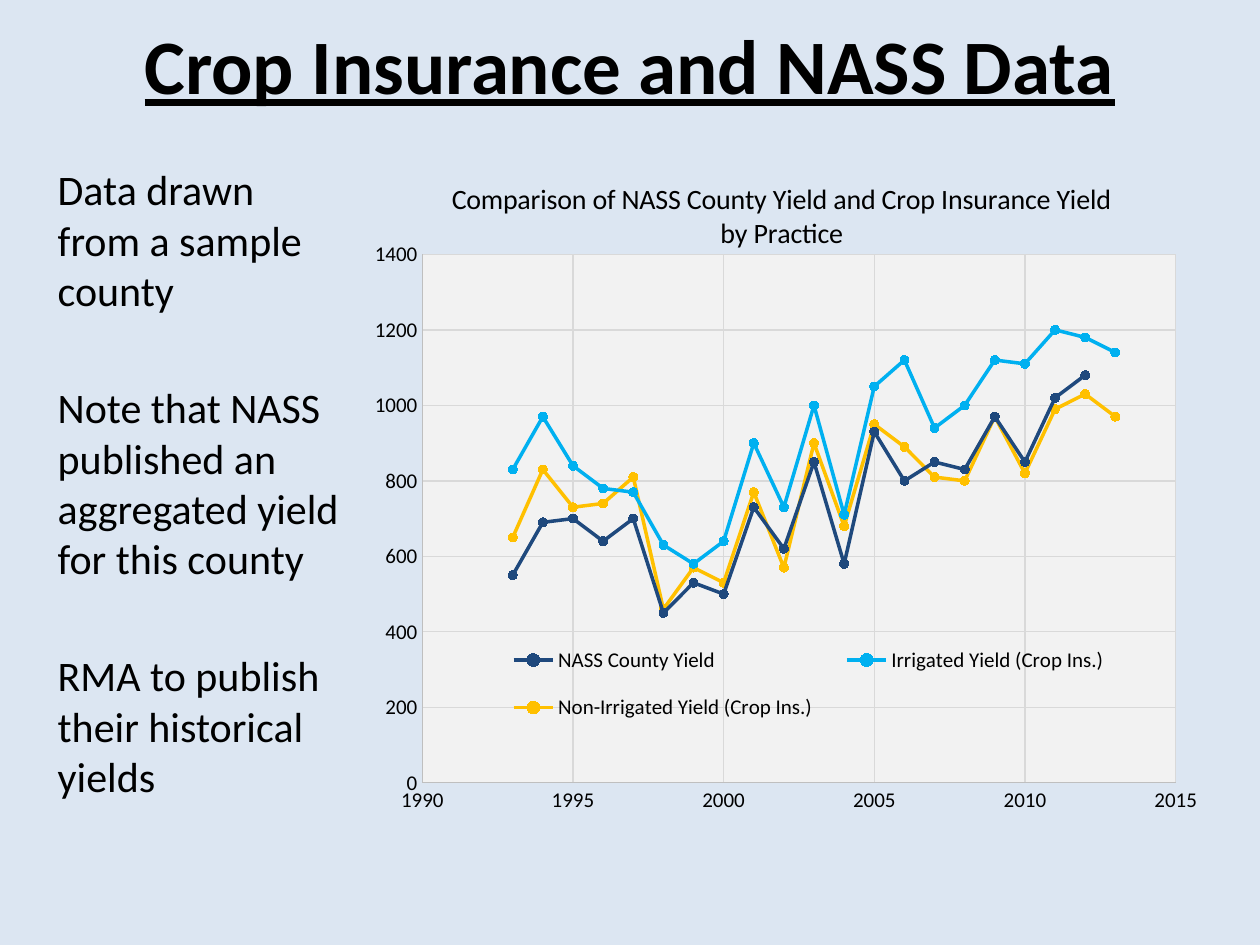
from itertools import zip_longest

from pptx import Presentation
from pptx.chart.data import XyChartData
from pptx.dml.color import RGBColor
from pptx.enum.chart import XL_CHART_TYPE as ChartType, XL_LEGEND_POSITION as LegendPosition
from pptx.enum.chart import XL_MARKER_STYLE as MarkerStyle, XL_TICK_MARK as TickMark
from pptx.enum.text import MSO_ANCHOR as Anchor, PP_ALIGN as Align
from pptx.oxml import parse_xml
from pptx.oxml.ns import nsdecls, qn
from pptx.util import Inches, Pt

WIDTH, HEIGHT = 10, 7.5
COLORS = {
    "page": "DCE6F2", "text": "000000", "plot": "F2F2F2", "axis": "BFBFBF", "grid": "D9D9D9",
    "nass": "1F497D", "irrigated": "00B0F0", "dry": "FFC000",
}
# Left, top, width and height as shares of the slide
REGIONS = {
    "title": (0.05, 0, 0.9, 0.123),
    "notes": (0.036, 0.167, 0.247, 0.733),
    "chart": (0.275, 0.163, 0.692, 0.733),
}
NOTES = [
    "Data drawn from a sample county",
    "Note that NASS published an aggregated yield for this county",
    "RMA to publish their historical yields",
]
CHART_TITLE = "Comparison of NASS County Yield and Crop Insurance Yield by Practice"
YEARS = range(1993, 2014)
YIELDS = [
    ("NASS County Yield", "nass",
     [550, 690, 700, 640, 700, 450, 530, 500, 730, 620, 850,
      580, 930, 800, 850, 830, 970, 850, 1020, 1080]),
    ("Irrigated Yield (Crop Ins.)", "irrigated",
     [830, 970, 840, 780, 770, 630, 580, 640, 900, 730, 1000,
      710, 1050, 1120, 940, 1000, 1120, 1110, 1200, 1180, 1140]),
    ("Non-Irrigated Yield (Crop Ins.)", "dry",
     [650, 830, 730, 740, 810, 460, 570, 530, 770, 570, 900,
      680, 950, 890, 810, 800, 970, 820, 990, 1030, 970]),
]


def color(name):
    return RGBColor.from_string(COLORS[name])


def set_all(target, **values):
    for name, value in values.items():
        setattr(target, name, value)


def set_font(font, size, **values):
    set_all(font, name="Calibri", size=Pt(size), **values)
    font.color.rgb = color("text")


def set_line(line, name, width):
    line.color.rgb = color(name)
    line.width = Pt(width)


def to_lengths(region):
    left, top, width, height = region
    return [Inches(share * side) for share, side in
            ((left, WIDTH), (top, HEIGHT), (width, WIDTH), (height, HEIGHT))]


def add_text(page, region, paragraphs, size, anchor, align, gap=0, **font_values):
    frame = page.shapes.add_textbox(*to_lengths(region)).text_frame
    set_all(frame, word_wrap=True, vertical_anchor=anchor)
    for index, text in enumerate(paragraphs):
        para = frame.add_paragraph() if index else frame.paragraphs[0]
        para.alignment = align
        if index:
            para.space_before = Pt(gap)
        span = para.add_run()
        span.text = text
        set_font(span.font, size, **font_values)


def set_layout(element, index, **shares):
    """Place a chart part by shares of the chart's size."""
    old = element.find(qn("c:layout"))
    if old is not None:
        element.remove(old)
    modes = "".join(f'<c:{axis}Mode val="edge"/>' for axis in "xy")
    places = "".join(f'<c:{side} val="{share}"/>' for side, share in shares.items())
    target = '<c:layoutTarget val="inner"/>' if element.tag == qn("c:plotArea") else ""
    element.insert(index, parse_xml(
        f'<c:layout {nsdecls("c")}><c:manualLayout>{target}{modes}{places}'
        "</c:manualLayout></c:layout>"))


def area_format(fill):
    return parse_xml(f'<c:spPr {nsdecls("c", "a")}>{fill}<a:ln><a:noFill/></a:ln></c:spPr>')


def style_axis(axis, low, high, step):
    set_all(axis, minimum_scale=low, maximum_scale=high, major_unit=step,
            has_major_gridlines=True, major_tick_mark=TickMark.NONE,
            minor_tick_mark=TickMark.NONE)
    set_font(axis.tick_labels.font, 12)
    axis.tick_labels.number_format = "General"
    axis.tick_labels.number_format_is_linked = False
    set_line(axis.format.line, "axis", 0.75)
    set_line(axis.major_gridlines.format.line, "grid", 0.75)


def style_series(series, name):
    set_line(series.format.line, name, 2)
    marker = series.marker
    set_all(marker, style=MarkerStyle.CIRCLE, size=5)
    marker.format.fill.solid()
    marker.format.fill.fore_color.rgb = color(name)
    marker.format.line.fill.background()


def add_chart_title(chart):
    chart.has_title = True
    frame = chart.chart_title.text_frame
    frame.text = CHART_TITLE
    set_font(frame.paragraphs[0].runs[0].font, 16, bold=False)
    set_layout(chart.chart_title._element, 1, x=0.115, y=0.03)


def add_legend(chart):
    chart.has_legend = True
    set_all(chart.legend, position=LegendPosition.BOTTOM, include_in_layout=False)
    set_font(chart.legend.font, 12)
    set_layout(chart.legend._element, 1, x=0.16, y=0.68, w=0.74, h=0.17)


def yield_data():
    """Give every series the same years, with None where no yield is known."""
    data = XyChartData()
    for name, _, values in YIELDS:
        series = data.add_series(name)
        for year, value in zip_longest(YEARS, values):
            series.add_data_point(year, value)
    return data


def drop_unknown_points(chart):
    for point in list(chart._chartSpace.iter(qn("c:pt"))):
        if point.findtext(qn("c:v")) in ("None", "", None):
            point.getparent().remove(point)


def add_yield_chart(page, region):
    box = page.shapes.add_chart(ChartType.XY_SCATTER_LINES, *to_lengths(region), yield_data())
    chart = box.chart
    drop_unknown_points(chart)
    set_font(chart.font, 10)
    add_chart_title(chart)
    add_legend(chart)
    style_axis(chart.category_axis, 1990, 2015, 5)
    style_axis(chart.value_axis, 0, 1400, 200)
    plot = chart.plots[0]
    plot.vary_by_categories = False
    for series, (_, name, _) in zip(plot.series, YIELDS):
        style_series(series, name)

    body = chart._chartSpace.find(qn("c:chart"))
    body.addnext(area_format("<a:noFill/>"))
    plot_area = body.find(qn("c:plotArea"))
    set_layout(plot_area, 0, x=0.087, y=0.145, w=0.864, h=0.763)
    plot_area.append(area_format(
        f'<a:solidFill><a:srgbClr val="{COLORS["plot"]}"/></a:solidFill>'))


def main():
    deck = Presentation()
    set_all(deck, slide_width=Inches(WIDTH), slide_height=Inches(HEIGHT))
    page = deck.slides.add_slide(deck.slide_layouts[6])
    page.background.fill.solid()
    page.background.fill.fore_color.rgb = color("page")
    add_text(page, REGIONS["notes"], NOTES, 24, Anchor.TOP, Align.LEFT, gap=38)
    add_yield_chart(page, REGIONS["chart"])
    add_text(page, REGIONS["title"], ["Crop Insurance and NASS Data"], 44,
             Anchor.BOTTOM, Align.CENTER, bold=True, underline=True)
    deck.save("out.pptx")


if __name__ == "__main__":
    main()
